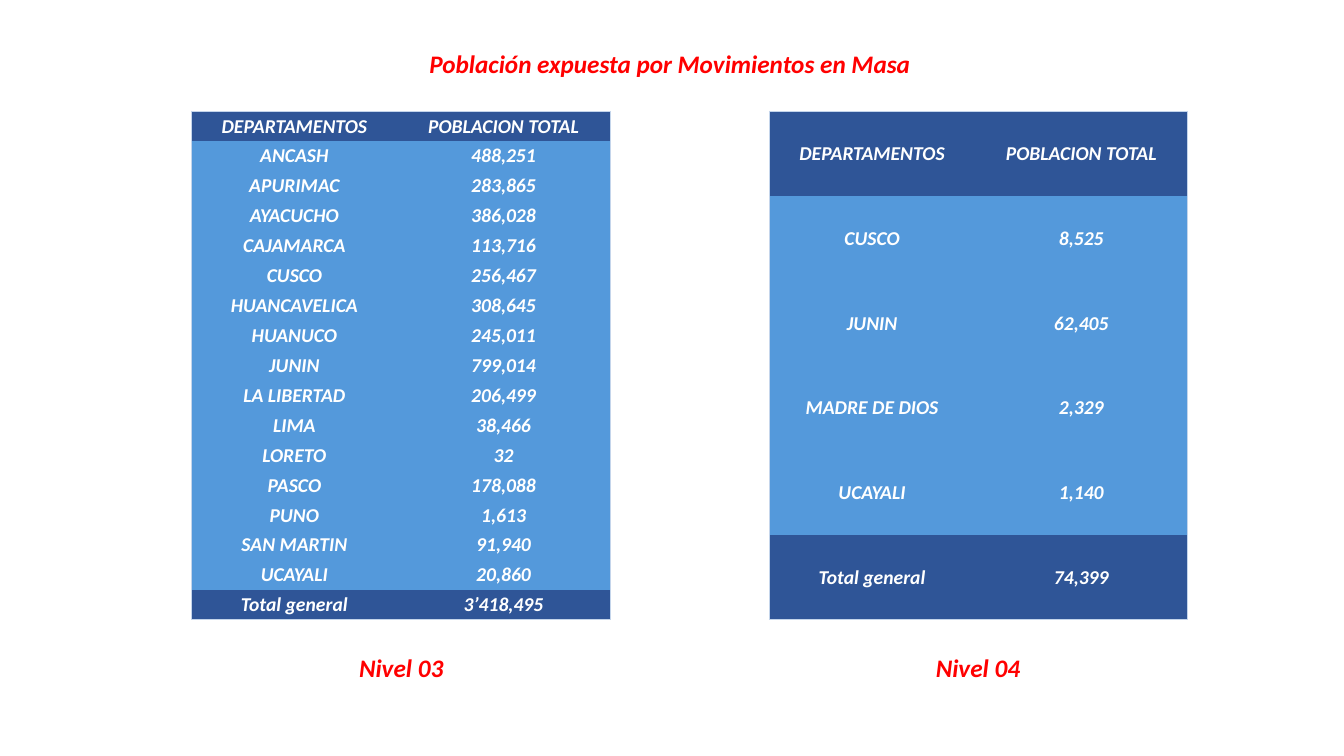
"""Build the slide on population exposed to mass movements."""
import lxml.etree
import pptx
import pptx.dml.color
import pptx.enum.text
import pptx.oxml.ns
import pptx.util

Inches = pptx.util.Inches
Pt = pptx.util.Pt
qn = pptx.oxml.ns.qn

THEME = {
    "font": "Calibri",
    "caption": "FF0000",
    "caption_size": 18,
    "cell_text": "FFFFFF",
    "cell_size": 14,
    "band": "2F5597",
    "body": "5499DB",
    "border": "C4D5EB",
    "border_width": 0.5,
}

HEADER = ("DEPARTAMENTOS", "POBLACION TOTAL")
LEVELS = [
    {
        "left": 1.9,
        "caption": "Nivel 03",
        "caption_left": 3.43,
        "rows": [
            ("ANCASH", "488,251"),
            ("APURIMAC", "283,865"),
            ("AYACUCHO", "386,028"),
            ("CAJAMARCA", "113,716"),
            ("CUSCO", "256,467"),
            ("HUANCAVELICA", "308,645"),
            ("HUANUCO", "245,011"),
            ("JUNIN", "799,014"),
            ("LA LIBERTAD", "206,499"),
            ("LIMA", "38,466"),
            ("LORETO", "32"),
            ("PASCO", "178,088"),
            ("PUNO", "1,613"),
            ("SAN MARTIN", "91,940"),
            ("UCAYALI", "20,860"),
            ("Total general", "3’418,495"),
        ],
    },
    {
        "left": 7.63,
        "caption": "Nivel 04",
        "caption_left": 9.15,
        "rows": [
            ("CUSCO", "8,525"),
            ("JUNIN", "62,405"),
            ("MADRE DE DIOS", "2,329"),
            ("UCAYALI", "1,140"),
            ("Total general", "74,399"),
        ],
    },
]
TABLE_TOP, TABLE_HEIGHT = 1.1, 5.05
COLUMN_WIDTHS = (2.04, 2.11)
CELL_FORMAT = {
    "margin_left": Inches(0.01),
    "margin_right": Inches(0.01),
    "margin_top": Inches(0.01),
    "margin_bottom": 0,
    "vertical_anchor": pptx.enum.text.MSO_ANCHOR.MIDDLE,
}


def write_text(text_frame, text, size, color):
    """Write one centred bold italic paragraph."""
    paragraph = text_frame.paragraphs[0]
    paragraph.alignment = pptx.enum.text.PP_ALIGN.CENTER
    run = paragraph.add_run()
    run.text = text
    font_format = {"name": THEME["font"], "size": Pt(size), "bold": True, "italic": True}
    for name, value in font_format.items():
        setattr(run.font, name, value)
    run.font.color.rgb = pptx.dml.color.RGBColor.from_string(color)


def set_borders(cell, outer_edges):
    """Draw the outer edges of a cell and clear the inner ones."""
    properties = cell._tc.get_or_add_tcPr()
    for position, (edge, is_outer) in enumerate(outer_edges.items()):
        line = lxml.etree.Element(qn(f"a:{edge}"), w=str(Pt(THEME["border_width"])))
        if is_outer:
            fill = lxml.etree.SubElement(line, qn("a:solidFill"))
            lxml.etree.SubElement(fill, qn("a:srgbClr"), val=THEME["border"])
        else:
            lxml.etree.SubElement(line, qn("a:noFill"))
        properties.insert(position, line)


presentation = pptx.Presentation()
presentation.slide_width = Inches(13.33)
presentation.slide_height = Inches(7.5)
slide = presentation.slides.add_slide(presentation.slide_layouts[6])

captions = [("Población expuesta por Movimientos en Masa", 4.13, 0.43, 5.03, False)]
captions += [(level["caption"], level["caption_left"], 6.42, 1.1, True) for level in LEVELS]
for text, left, top, width, wraps in captions:
    text_box = slide.shapes.add_textbox(Inches(left), Inches(top), Inches(width), Inches(0.4))
    text_box.text_frame.word_wrap = wraps
    text_box.text_frame.auto_size = pptx.enum.text.MSO_AUTO_SIZE.SHAPE_TO_FIT_TEXT
    write_text(text_box.text_frame, text, THEME["caption_size"], THEME["caption"])

for level in LEVELS:
    rows = [HEADER] + level["rows"]
    last_row = len(rows) - 1
    last_column = len(HEADER) - 1
    table = slide.shapes.add_table(
        len(rows), len(HEADER), Inches(level["left"]), Inches(TABLE_TOP),
        Inches(sum(COLUMN_WIDTHS)), Inches(TABLE_HEIGHT),
    ).table
    table.first_row = False
    table.horz_banding = False
    for column, width in zip(table.columns, COLUMN_WIDTHS):
        column.width = Inches(width)
    for row_index, row in enumerate(rows):
        table.rows[row_index].height = Inches(TABLE_HEIGHT / len(rows))
        fill_name = "band" if row_index in (0, last_row) else "body"
        for column_index, text in enumerate(row):
            cell = table.cell(row_index, column_index)
            for name, value in CELL_FORMAT.items():
                setattr(cell, name, value)
            cell.fill.solid()
            cell.fill.fore_color.rgb = pptx.dml.color.RGBColor.from_string(THEME[fill_name])
            write_text(cell.text_frame, text, THEME["cell_size"], THEME["cell_text"])
            set_borders(cell, {
                "lnL": column_index == 0,
                "lnR": column_index == last_column,
                "lnT": row_index == 0,
                "lnB": row_index == last_row,
            })

presentation.save("out.pptx")
